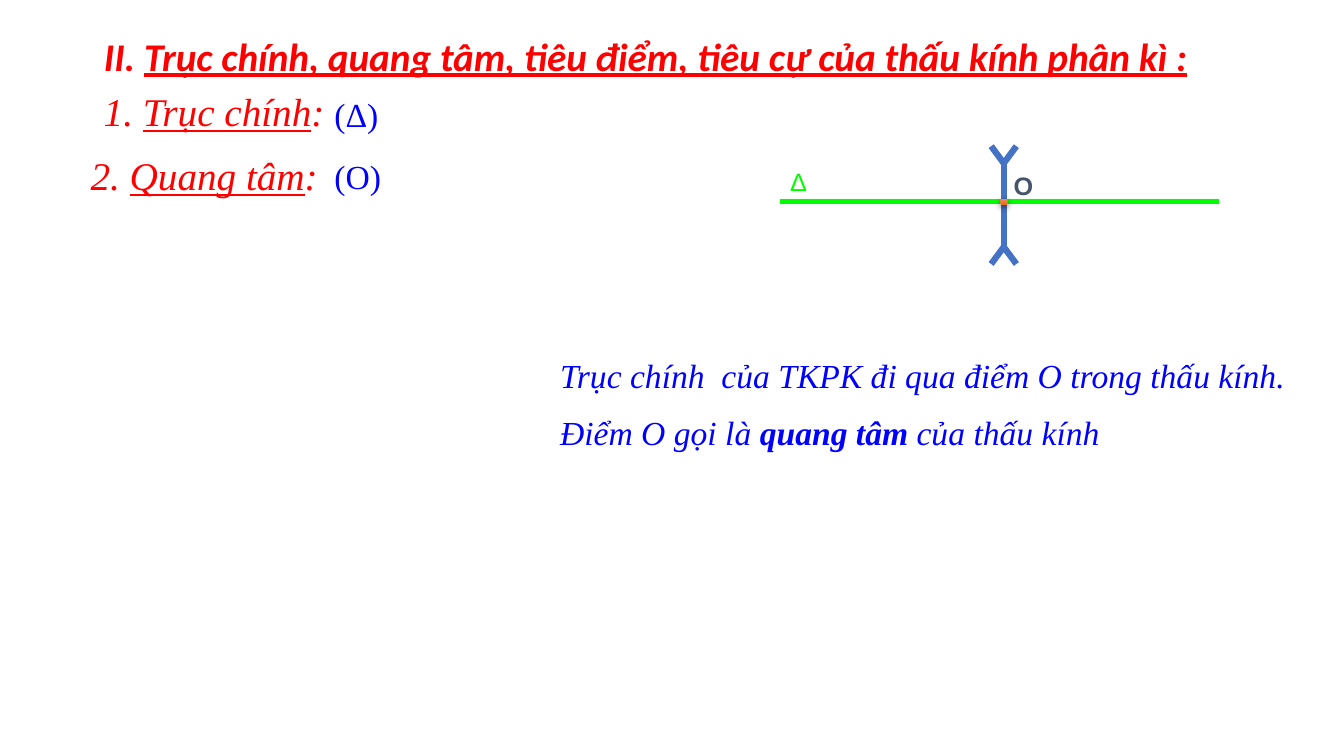
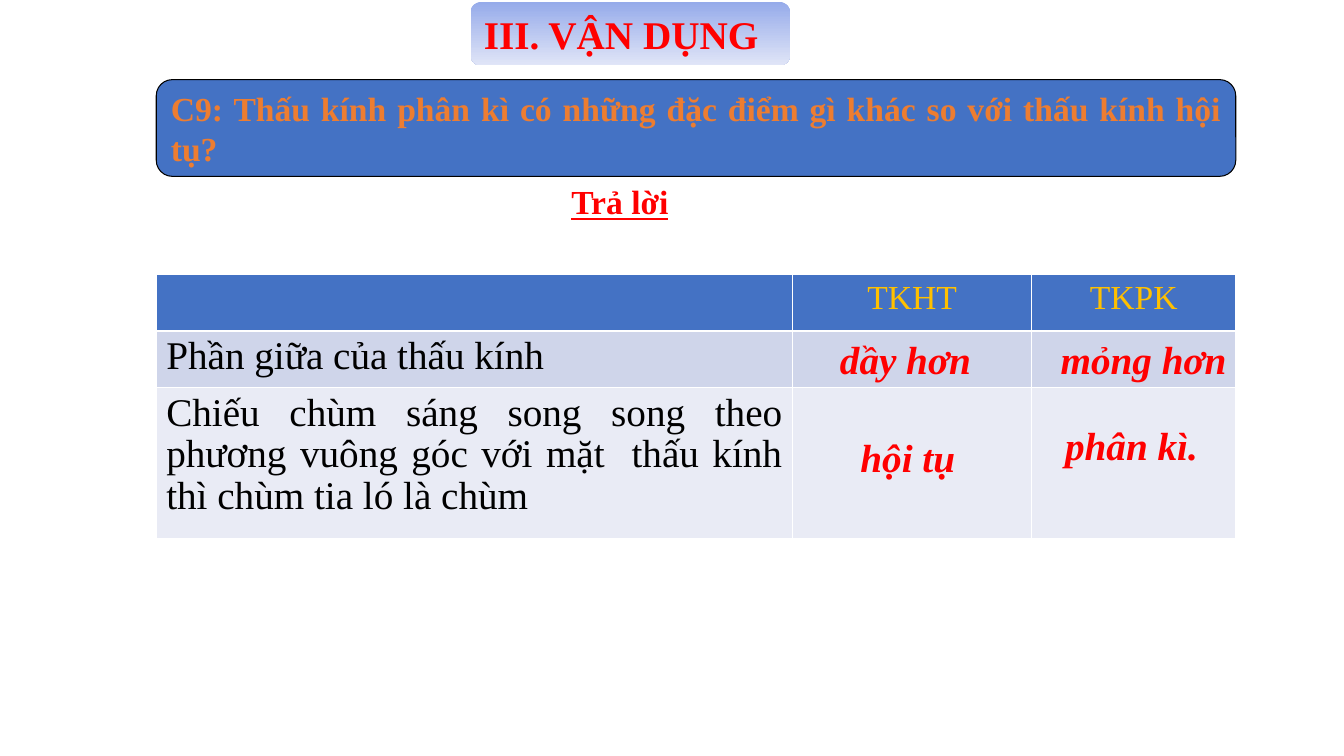
from dataclasses import dataclass, replace

from lxml import etree
from pptx import Presentation
from pptx.dml.color import RGBColor
from pptx.enum.shapes import MSO_CONNECTOR, MSO_SHAPE
from pptx.enum.text import MSO_ANCHOR, MSO_AUTO_SIZE, PP_ALIGN
from pptx.oxml.ns import qn
from pptx.util import Pt

LEFT, CENTER, JUSTIFY = PP_ALIGN.LEFT, PP_ALIGN.CENTER, PP_ALIGN.JUSTIFY
TOP, MIDDLE = MSO_ANCHOR.TOP, MSO_ANCHOR.MIDDLE
ROUND, OVAL = MSO_SHAPE.ROUNDED_RECTANGLE, MSO_SHAPE.OVAL
STRAIGHT = MSO_CONNECTOR.STRAIGHT
FIXED = MSO_AUTO_SIZE.NONE


@dataclass(frozen=True)
class Style:
    color: str
    size: int
    font: str = "Times New Roman"
    bold: bool = False
    italic: bool = False


@dataclass(frozen=True)
class Theme:
    red: str = "FF0000"
    blue: str = "0000FF"
    green: str = "00FF00"
    steel: str = "4472C4"
    slate: str = "44546A"
    orange: str = "ED7D31"
    gold: str = "FFC000"
    black: str = "000000"
    badge: tuple = ("96ABEA", "E0E5F7")
    dot: tuple = ("F18C57", "E56C19")
    bands: tuple = ("4472C4", "CFD5EA", "E9EBF5")
    small: int = 18
    body: int = 24
    large: int = 28


THEME = Theme()
HEAD = Style(THEME.red, THEME.large, bold=True)
TOPIC = Style(THEME.red, THEME.large, italic=True)
NOTE = Style(THEME.blue, THEME.body)
REPLY = replace(HEAD, italic=True)


def rgb(code):
    return RGBColor.from_string(code)


def write(frame, paras, style, align=LEFT, gap=0):
    """Fill a frame; each paragraph is a list of (text, marks), marks being b and u."""
    for i, parts in enumerate(paras):
        par = frame.add_paragraph() if i else frame.paragraphs[0]
        par.alignment = align
        par.space_before = Pt(gap if i else 0)
        for text, marks in parts:
            run = par.add_run()
            run.text = text
            font = run.font
            font.name, font.size = style.font, Pt(style.size)
            font.color.rgb = rgb(style.color)
            font.bold = style.bold or "b" in marks
            font.italic = style.italic
            font.underline = "u" in marks


def plain(text):
    return [[(text, "")]]


def fit(frame, anchor=TOP):
    frame.word_wrap = True
    frame.auto_size = FIXED
    frame.vertical_anchor = anchor
    frame.margin_left = frame.margin_right = Pt(7.2)
    frame.margin_top = frame.margin_bottom = Pt(3.6)


def label(slide, area, paras, style, align=LEFT, gap=0):
    box = slide.shapes.add_textbox(*map(Pt, area))
    fit(box.text_frame)
    write(box.text_frame, paras, style, align, gap)


def title(slide, area, parts, style, anchor=TOP):
    """Place the title in front of what is already drawn."""
    box = slide.shapes.title
    box.left, box.top, box.width, box.height = map(Pt, area)
    fit(box.text_frame, anchor)
    write(box.text_frame, [parts], style)
    box.element.getparent().append(box.element)


def shape(slide, kind, area, fill, edge=None):
    """Draw a shape; a pair of colours as fill runs from top to bottom."""
    item = slide.shapes.add_shape(kind, *map(Pt, area))
    item.shadow.inherit = False
    if isinstance(fill, tuple):
        item.fill.gradient()
        item.fill.gradient_angle = 270
        for stop, code in zip(item.fill.gradient_stops, fill):
            stop.color.rgb = rgb(code)
    else:
        item.fill.solid()
        item.fill.fore_color.rgb = rgb(fill)
    if edge:
        item.line.color.rgb = rgb(edge)
        item.line.width = Pt(0.75)
    else:
        item.line.fill.background()
    return item


def shade(item):
    """Give a shape a soft shadow just below it."""
    effects = item.element.spPr.find(qn("a:effectLst"))
    outer = etree.SubElement(effects, qn("a:outerShdw"), blurRad=str(Pt(4.5)),
                             dist=str(Pt(1.5)), dir="5400000", rotWithShape="0")
    tint = etree.SubElement(outer, qn("a:srgbClr"), val=THEME.black)
    etree.SubElement(tint, qn("a:alpha"), val="63000")


def line(slide, start, end, color, width):
    item = slide.shapes.add_connector(STRAIGHT, *map(Pt, start + end))
    item.line.color.rgb = rgb(color)
    item.line.width = Pt(width)
    etree.SubElement(item.element.spPr, qn("a:effectLst"))


def lens(slide, x, top, foot):
    """Draw the diverging lens symbol: a stem with a fork at both ends."""
    line(slide, (x, top), (x, foot), THEME.steel, 4.5)
    for y, rise in ((top, -12.2), (foot, 12.2)):
        for side in (9, -9):
            line(slide, (x, y), (x + side, y + rise), THEME.steel, 4.5)


def grid(slide, area, widths, heights, rows):
    table = slide.shapes.add_table(len(rows), len(widths), *map(Pt, area)).table
    for col, width in zip(table.columns, widths):
        col.width = Pt(width)
    for r, (row, texts) in enumerate(zip(table.rows, rows)):
        row.height = Pt(heights[r])
        style = Style(THEME.black, THEME.large) if r else Style(THEME.gold, THEME.body)
        for cell, text in zip(row.cells, texts):
            cell.fill.solid()
            cell.fill.fore_color.rgb = rgb(THEME.bands[r])
            if text:
                write(cell.text_frame, plain(text), style, JUSTIFY if r else CENTER)
                cell.text_frame.paragraphs[0].line_spacing = 0.96 if r else 1.0


def axis(slide):
    title(slide, (67, 19.4, 862, 40),
          [("II. ", ""),
           ("Trục chính, quang tâm, tiêu điểm, tiêu cự của thấu kính phân kì :", "u")],
          replace(REPLY, font="Calibri"))
    topics = (("1. ", "Trục chính", "(Δ)", 67, 59.2, 63.4),
              ("2. ", "Quang tâm", "(O)", 57.6, 104.4, 108))
    for number, name, sign, left, top, level in topics:
        label(slide, (left, top, 204, 41), [[(number, ""), (name, "u"), (":", "")]], TOPIC)
        label(slide, (231.8, level, 90, 36), plain(sign), NOTE)

    lens(slide, 717, 116.6, 176.4)
    line(slide, (557.3, 144), (870.5, 144), THEME.green, 3)
    delta = Style(THEME.green, THEME.small, "Arial")
    label(slide, (557.3, 115.2, 40, 29), plain("Δ"), delta)
    label(slide, (717, 118, 30, 29), plain("O"),
          replace(delta, color=THEME.slate, bold=True))
    shade(shape(slide, OVAL, (714, 142, 6.5, 4.3), THEME.dot))

    label(slide, (393, 249.8, 543, 80),
          [[("Trục chính  của TKPK đi qua điểm O trong thấu kính.", "")],
           [("Điểm O gọi là ", ""), ("quang tâm ", "b"), ("của thấu kính", "")]],
          replace(NOTE, italic=True), gap=12)


def review(slide):
    shape(slide, ROUND, (336.2, 1.4, 228.2, 45.4), THEME.badge)
    title(slide, (338.4, 1.4, 224, 45.4), [("III. VẬN DỤNG", "")], HEAD, MIDDLE)
    task = shape(slide, ROUND, (111.6, 56.9, 771.1, 69.1), THEME.steel, THEME.black)
    fit(task.text_frame, MIDDLE)
    write(task.text_frame,
          plain("C9: Thấu kính phân kì có những đặc điểm gì khác so với thấu kính hội tụ?"),
          Style(THEME.orange, THEME.body, bold=True), JUSTIFY)
    label(slide, (401, 126, 99, 36), [[("Trả lời", "u")]],
          replace(HEAD, size=THEME.body))

    grid(slide, (111.6, 196, 771.1, 189), (454.5, 171, 145.6), (40.4, 40.6, 108),
         (("", "TKHT", "TKPK"),
          ("Phần giữa của thấu kính", "", ""),
          ("Chiếu chùm sáng song song theo phương vuông góc với mặt  thấu kính "
           "thì chùm tia ló là chùm", "", "")))
    replies = (("dầy hơn", 544.1, 236.2), ("mỏng hơn", 714.2, 236.2),
               ("hội tụ", 545.8, 306), ("phân kì.", 705.6, 297.4))
    for text, left, top in replies:
        label(slide, (left, top, 205.2, 41), plain(text), REPLY, CENTER)


def main():
    deck = Presentation()
    deck.slide_width, deck.slide_height = Pt(960), Pt(540)
    for build in (axis, review):
        build(deck.slides.add_slide(deck.slide_layouts[5]))
    deck.save("out.pptx")


if __name__ == "__main__":
    main()
